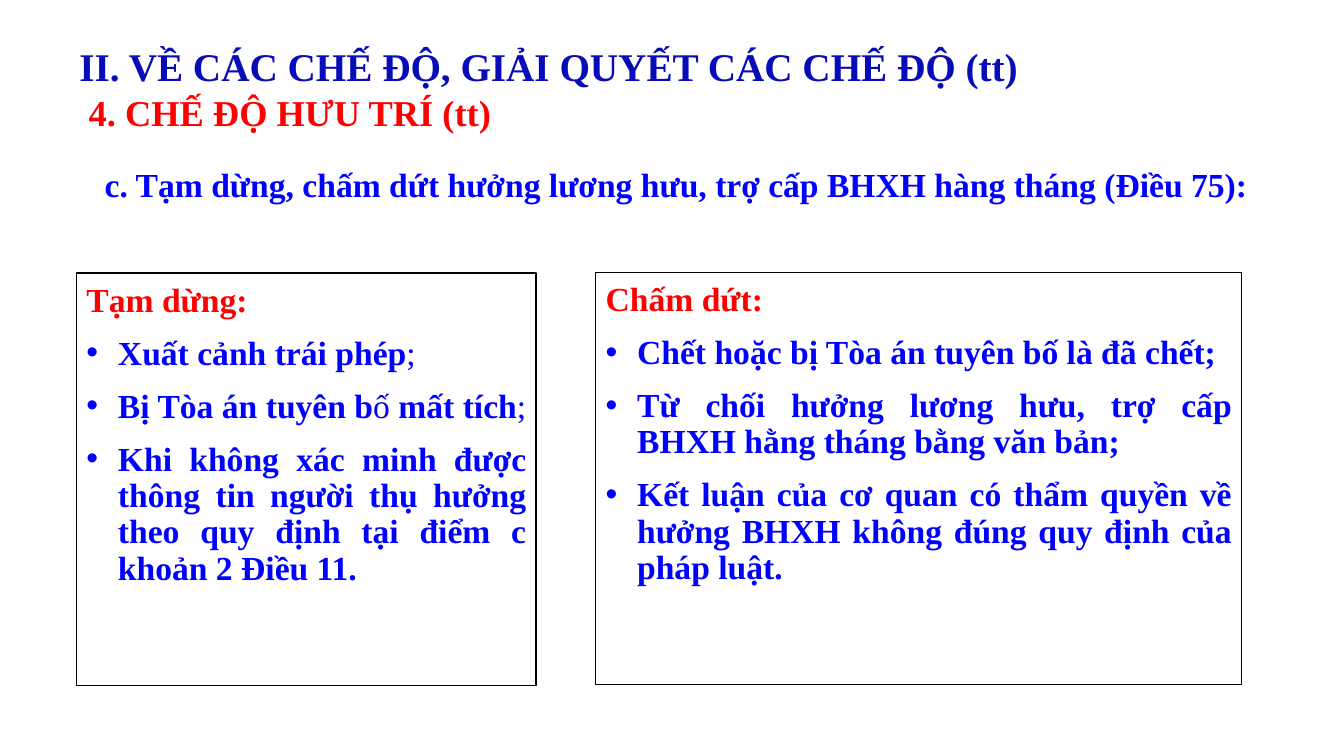
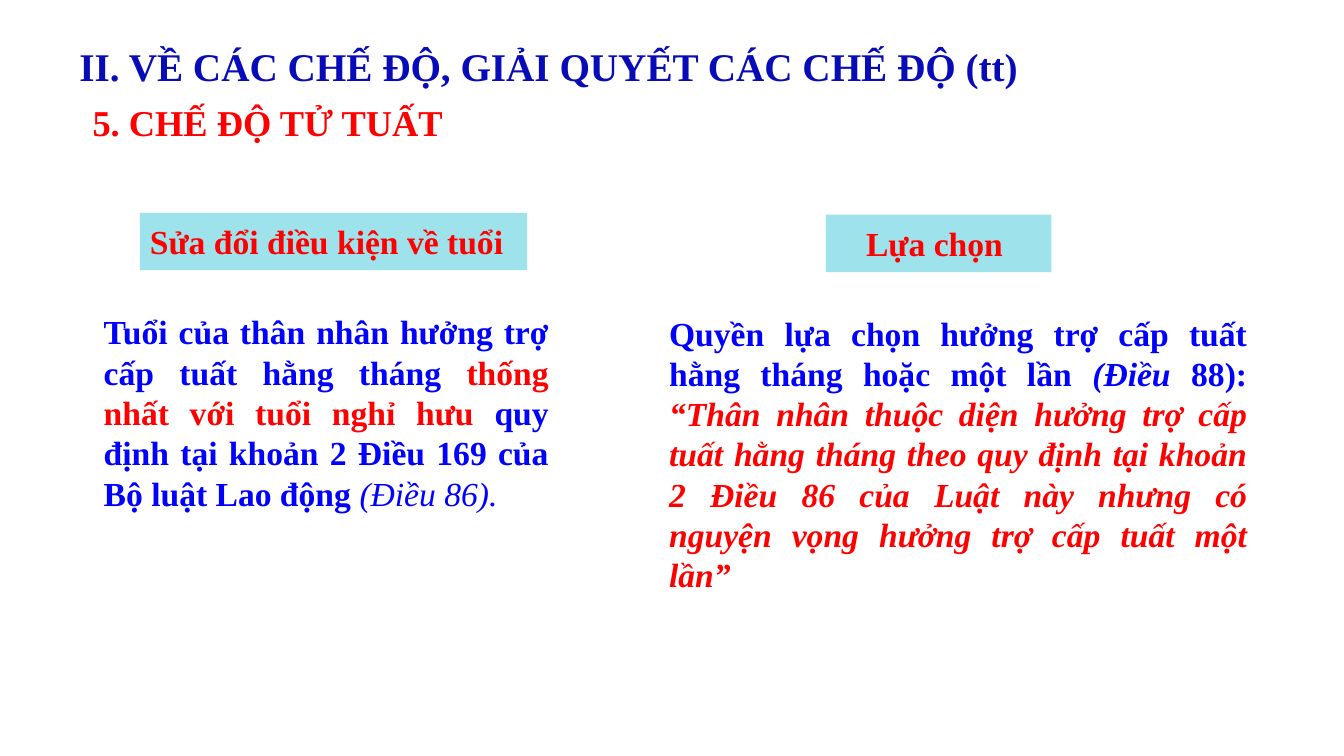
import pptx
import pptx.dml.color
import pptx.enum.shapes
import pptx.enum.text
import pptx.oxml.ns
import pptx.util
from lxml import etree

Pt = pptx.util.Pt
ALIGN = pptx.enum.text.PP_ALIGN
ANCHOR = pptx.enum.text.MSO_ANCHOR


def color(value):
    return pptx.dml.color.RGBColor.from_string(value)


def add_run(paragraph, text, font="Times New Roman", size=24, fill="0000FF", bold=True, italic=False):
    run = paragraph.add_run()
    run.text = text
    run.font.name = font
    run.font.size = Pt(size)
    run.font.color.rgb = color(fill)
    run.font.bold = bold
    run.font.italic = italic


def add_bullet(paragraph, indent=22.5):
    properties = paragraph._p.get_or_add_pPr()
    properties.set("marL", str(Pt(indent)))
    properties.set("indent", str(-Pt(indent)))
    font = etree.SubElement(properties, pptx.oxml.ns.qn("a:buFont"))
    font.set("typeface", "Arial")
    bullet = etree.SubElement(properties, pptx.oxml.ns.qn("a:buChar"))
    bullet.set("char", "•")


class Deck:
    WHITE = "FFFFFF"
    BLACK = "000000"
    NAVY = "080CB8"
    RED = "FF0000"
    CYAN = "9EE3EC"
    TITLE = "II. VỀ CÁC CHẾ ĐỘ, GIẢI QUYẾT CÁC CHẾ ĐỘ (tt)"

    def __init__(self):
        self.presentation = pptx.Presentation()
        self.presentation.slide_width = Pt(960)
        self.presentation.slide_height = Pt(540)
        self.slide = None

    def add_slide(self, section, section_left, section_top):
        self.slide = self.presentation.slides.add_slide(self.presentation.slide_layouts[6])
        title = self.rectangle(49.7, 26.6, 687.6, 41, self.WHITE)
        self.set_text(title, [(self.TITLE, {"size": 28, "fill": self.NAVY})])
        self.text(section_left, section_top, 306, 39, [(section, {"size": 26, "fill": self.RED})])

    def rectangle(self, left, top, width, height, fill, line=None):
        shape = self.slide.shapes.add_shape(
            pptx.enum.shapes.MSO_SHAPE.RECTANGLE, Pt(left), Pt(top), Pt(width), Pt(height))
        shape.shadow.inherit = False
        shape.fill.solid()
        shape.fill.fore_color.rgb = color(fill)
        if line:
            shape.line.color.rgb = color(line)
            shape.line.width = Pt(1)
        else:
            shape.line.fill.background()
        return shape

    def set_text(self, shape, runs, align=ALIGN.LEFT, anchor=ANCHOR.TOP, spacing=1.0):
        frame = shape.text_frame
        frame.word_wrap = True
        frame.vertical_anchor = anchor
        paragraph = frame.paragraphs[0]
        paragraph.alignment = align
        paragraph.line_spacing = spacing
        for text, style in runs:
            add_run(paragraph, text, **style)

    def text(self, left, top, width, height, runs, **layout):
        box = self.slide.shapes.add_textbox(Pt(left), Pt(top), Pt(width), Pt(height))
        self.set_text(box, runs, **layout)

    def label(self, left, top, width, text, align):
        shape = self.rectangle(left, top, width, 41, self.CYAN)
        self.set_text(shape, [(text, {"fill": self.RED})], align=align, anchor=ANCHOR.MIDDLE)

    def bullet_panel(self, left, top, width, heading, items):
        shape = self.rectangle(left, top, width, 294.5, self.WHITE, self.BLACK)
        self.set_text(shape, [(heading, {"fill": self.RED})], spacing=0.9)
        frame = shape.text_frame
        frame.margin_top = frame.margin_bottom = Pt(7.2)
        for runs in items:
            paragraph = frame.add_paragraph()
            paragraph.alignment = ALIGN.JUSTIFY
            paragraph.line_spacing = 0.9
            paragraph.space_before = Pt(12)
            add_bullet(paragraph)
            for text, style in runs:
                add_run(paragraph, text, **style)


def build_pension(deck):
    regular = {"bold": False}
    deck.add_slide("4. CHẾ ĐỘ HƯU TRÍ (tt)", 56.2, 61.2)
    deck.text(67.7, 103, 836.6, 60.5, [
        ("c. Tạm dừng, chấm dứt hưởng lương hưu, trợ cấp BHXH hàng tháng (Điều 75):", {}),
    ], anchor=ANCHOR.MIDDLE, spacing=0.9)
    deck.bullet_panel(54.7, 195, 328.3, "Tạm dừng:", [
        [("Xuất cảnh trái phép", {}), (";", regular)],
        [("Bị Tòa án tuyên b", {}), ("ố ", regular), ("mất tích", {}), (";", regular)],
        [("Khi không xác minh được thông tin người thụ hưởng theo quy định "
          "tại điểm c khoản 2 Điều 11.", {})],
    ])
    deck.bullet_panel(425.5, 194.5, 461.5, "Chấm dứt:", [
        [("Chết hoặc bị Tòa án tuyên bố là đã chết;", {})],
        [("Từ chối hưởng lương hưu, trợ cấp BHXH hằng tháng bằng văn bản;", {})],
        [("Kết luận của cơ quan có thẩm quyền về hưởng BHXH không đúng "
          "quy định của pháp luật.", {})],
    ])


def build_survivor(deck):
    deck.add_slide("5. CHẾ ĐỘ TỬ TUẤT", 59, 67.7)
    deck.label(100, 152, 276.5, "Sửa đổi điều kiện về tuổi", ALIGN.LEFT)
    deck.label(590, 153.4, 161, "Lựa chọn ", ALIGN.CENTER)
    deck.text(67, 218.9, 332, 183, [
        ("Tuổi của thân nhân hưởng trợ cấp tuất hằng tháng ", {}),
        ("thống nhất với tuổi nghỉ hưu ", {"fill": deck.RED}),
        ("quy định tại khoản 2 Điều 169 của Bộ luật Lao động ", {}),
        ("(Điều 86).", {"bold": False, "italic": True}),
    ], align=ALIGN.JUSTIFY)
    deck.text(470.9, 219.6, 427, 181.5, [
        ("Quyền lựa chọn hưởng trợ cấp tuất hằng tháng hoặc một lần ", {}),
        ("(Điều ", {"italic": True}),
        ("88): ", {}),
        ("“Thân nhân thuộc diện hưởng trợ cấp tuất hằng tháng theo quy định tại khoản 2 "
         "Điều 86 của Luật này nhưng có nguyện vọng hưởng trợ cấp tuất một lần”",
         {"fill": deck.RED, "italic": True}),
    ], align=ALIGN.JUSTIFY)


def main():
    deck = Deck()
    build_pension(deck)
    build_survivor(deck)
    deck.presentation.save("out.pptx")


if __name__ == "__main__":
    main()
